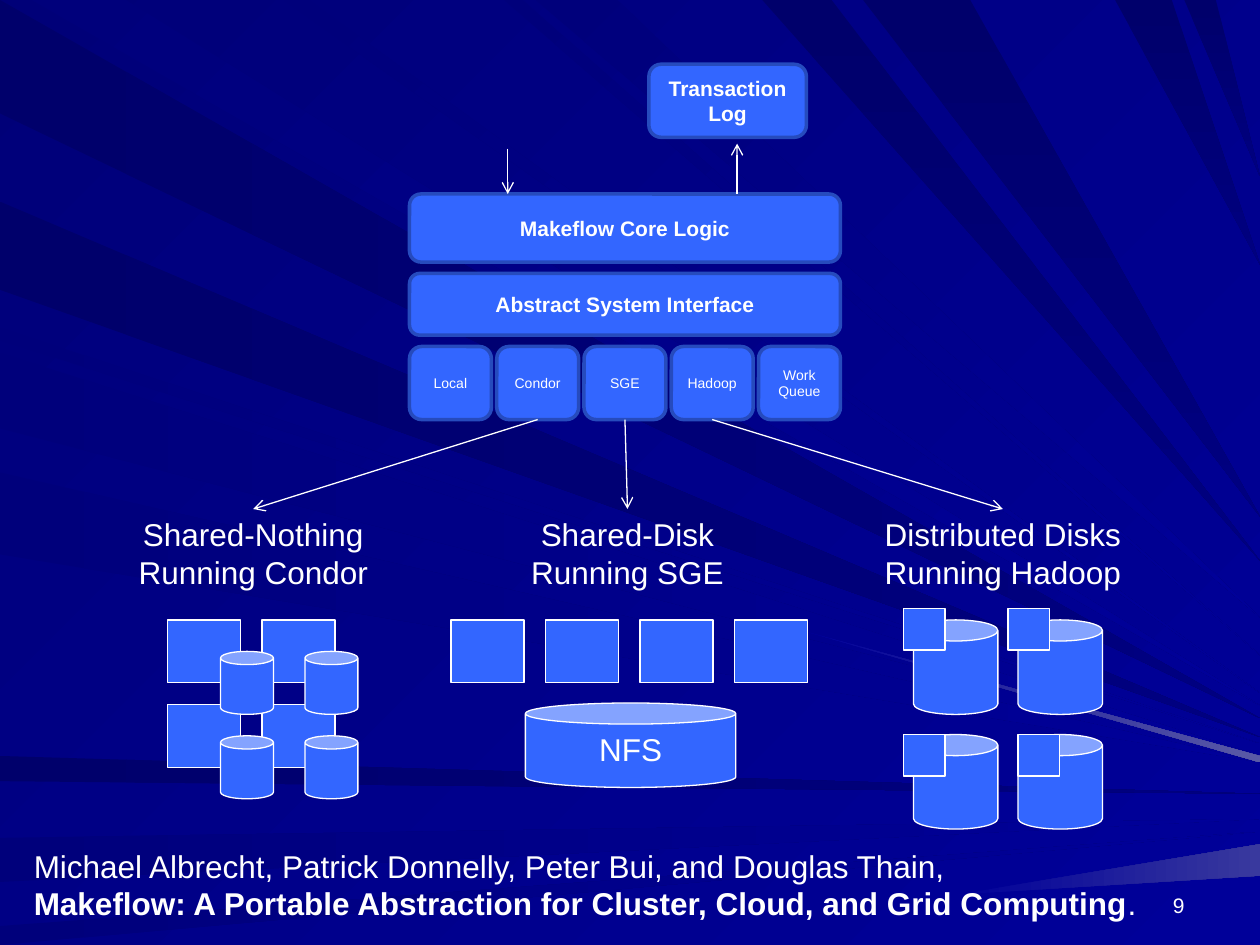
import lxml.etree
import pptx
import pptx.dml.color
import pptx.enum.shapes
import pptx.enum.text
import pptx.oxml.ns
import pptx.util

Inches = pptx.util.Inches
KIND = pptx.enum.shapes.MSO_SHAPE
ALIGN = pptx.enum.text.PP_ALIGN
ANCHOR = pptx.enum.text.MSO_ANCHOR
BLUE, EDGE, WHITE = "3366FF", "264BBD", "FFFFFF"
DEEP, PALE, GLOW = ("00006B", "000080"), ("00007B", "000099"), ("000099", "5A5AA6")

SIDE = [(0, 0.9, 5.7, DEEP), (1.6, 2.3, 5.85, DEEP), (2.6, 2.7, 5.9, PALE),
        (2.8, 3.4, 6, PALE), (3.75, 4.4, 6.05, PALE), (6, 6.2, 6.3, DEEP),
        (6.65, 7, 6.5, PALE), (7.35, 7.5, 6.6, PALE)]
TOP = [(0.25, 1, 5.6, PALE), (2.25, 2.45, 5.5, PALE), (4, 4.15, 5.2, PALE),
       (4.25, 4.9, 4.9, PALE), (6.05, 6.6, 4.45, DEEP), (6.85, 7.7, 4.1, DEEP),
       (8.85, 9.3, 2.1, DEEP), (9.4, 9.65, 1.4, DEEP)]


def paint(part, shade):
    """Give a fill or line fill one solid hex colour."""
    part.solid()
    part.fore_color.rgb = pptx.dml.color.RGBColor.from_string(shade)


def blend(fill, start, end, angle):
    """Give a fill a two-stop gradient with a clockwise angle."""
    fill.gradient()
    fill.gradient_angle = -angle % 360
    for stop, shade in zip(fill.gradient_stops, (start, end)):
        stop.color.rgb = pptx.dml.color.RGBColor.from_string(shade)


def write(frame, *lines, size=18, bold=False, align=ALIGN.CENTER, anchor=ANCHOR.TOP):
    """Write each line, a string or a list of (text, bold) runs, as a paragraph."""
    frame.vertical_anchor = anchor
    for i, line in enumerate(lines):
        par = frame.add_paragraph() if i else frame.paragraphs[0]
        par.alignment = align
        for words, heavy in [(line, bold)] if isinstance(line, str) else line:
            if words == "\v":
                par.add_line_break()
                continue
            run = par.add_run()
            run.text = words
            run.font.name, run.font.size, run.font.bold = "Arial", pptx.util.Pt(size), heavy
            run.font.color.rgb = pptx.dml.color.RGBColor.from_string(WHITE)


def block(slide, kind, left, top, width, height, edge=WHITE, weight=0.75):
    """Add a blue preset shape."""
    shape = slide.shapes.add_shape(kind, Inches(left), Inches(top), Inches(width), Inches(height))
    shape.shadow.inherit = False
    paint(shape.fill, BLUE)
    paint(shape.line.fill, edge)
    shape.line.width = pptx.util.Pt(weight)
    return shape


def panel(slide, left, top, width, height, *lines, size=12, bold=True):
    """Add a rounded, labelled box."""
    shape = block(slide, KIND.ROUNDED_RECTANGLE, left, top, width, height, EDGE, 2)
    shape.text_frame.word_wrap = True
    write(shape.text_frame, *lines, size=size, bold=bold, anchor=ANCHOR.MIDDLE)
    return shape


def note(slide, left, top, width, height, *lines, **form):
    """Add an unwrapped text box."""
    box = slide.shapes.add_textbox(Inches(left), Inches(top), Inches(width), Inches(height))
    box.text_frame.word_wrap = False
    write(box.text_frame, *lines, **form)
    return box


def arrow(slide, x1=0, y1=0, x2=0, y2=0):
    """Add a thin white line with an arrowhead at its end."""
    line = slide.shapes.add_connector(
        pptx.enum.shapes.MSO_CONNECTOR.STRAIGHT, Inches(x1), Inches(y1), Inches(x2), Inches(y2))
    paint(line.line.fill, WHITE)
    line.line.width = pptx.util.Pt(0.75)
    props = line.element.spPr
    tag = pptx.oxml.ns.qn
    lxml.etree.SubElement(props.find(tag("a:ln")), tag("a:tailEnd"), type="arrow")
    lxml.etree.SubElement(props, tag("a:effectLst"))
    return line


def grid(slide, kind, left, top, cols, rows, size, step):
    """Lay out equal shapes in columns and rows."""
    for row in range(rows):
        for col in range(cols):
            block(slide, kind, left + col * step[0], top + row * step[1], *size)


def ray(group, tone, angle, *points):
    """Add one gradient beam."""
    spots = [(Inches(x), Inches(y)) for x, y in points]
    pen = group.shapes.build_freeform(*spots[0], scale=1.0)
    pen.add_line_segments(spots[1:], close=True)
    beam = pen.convert_to_shape()
    beam.shadow.inherit = False
    beam.line.fill.background()
    blend(beam.fill, *tone, angle)


def backdrop(slide, right):
    """Draw the blue gradient and the rays that meet the right edge."""
    blend(slide.background.fill, "000078", "000099", 45)
    group = slide.shapes.add_group_shape()
    for start, end, tip, tone in SIDE:
        ray(group, tone, 0, (0, start), (right, tip), (0, end))
    for start, end, tip, tone in TOP:
        ray(group, tone, 90 if tone == DEEP else 45, (start, 0), (right, tip), (end, 0))
    ray(group, GLOW, 0, (6.35, 5), (right, 6), (right, 6.05))
    ray(group, (GLOW[0], "39399E"), 0, (7.6, 7.1), (right, 6.7), (right, 6.95))


def stack(slide, left, top, width):
    """Draw the layered engine and return its driver boxes."""
    panel(slide, left, top + 1.03, width, 0.54, "Makeflow Core Logic")
    panel(slide, left, top + 1.66, width, 0.49, "Abstract System Interface")
    names = [["Local"], ["Condor"], ["SGE"], ["Hadoop"], ["Work", "Queue"]]
    wide = 0.65
    step = (width - wide) / (len(names) - 1)
    drives = [panel(slide, left + i * step, top + 2.24, wide, 0.58, *name, size=8, bold=False)
              for i, name in enumerate(names)]
    arrow(slide, left + 0.78, top + 0.67, left + 0.78, top + 1.03)
    panel(slide, left + 1.9, top, 1.25, 0.58, "Transaction Log")
    arrow(slide, left + 2.6, top + 1.03, left + 2.6, top + 0.63)
    return drives


def target(slide, drive, left, top, width, *lines):
    """Add a cluster heading and the arrow that leads to it."""
    head = note(slide, left, top, width, 0.71, *lines)
    line = arrow(slide)
    line.begin_connect(drive, 2)
    line.end_connect(head, 0)


def nothing(slide, left, top):
    """Draw nodes that each have a disk of their own."""
    grid(slide, KIND.RECTANGLE, left, top, 2, 2, (0.58, 0.5), (0.75, 0.67))
    grid(slide, KIND.CAN, left + 0.42, top + 0.25, 2, 2, (0.42, 0.5), (0.67, 0.67))


def shared(slide, left, top):
    """Draw a row of nodes above one shared disk."""
    grid(slide, KIND.RECTANGLE, left, top, 4, 1, (0.58, 0.5), (0.75, 0))
    disk = block(slide, KIND.CAN, left + 0.59, top + 0.66, 1.67, 0.67)
    write(disk.text_frame, "NFS")


def spread(slide, left, top):
    """Draw large disks that each carry a small node."""
    grid(slide, KIND.CAN, left + 0.08, top + 0.09, 2, 2, (0.67, 0.75), (0.83, 0.91))
    for row, step in enumerate((0.83, 0.91)):
        grid(slide, KIND.RECTANGLE, left, top + row, 2, 1, (0.33, 0.33), (step, 0))


def main():
    """Build and save the slide."""
    deck = pptx.Presentation()
    deck.slide_width, deck.slide_height = Inches(10), Inches(7.5)
    slide = deck.slides.add_slide(deck.slide_layouts[6])
    backdrop(slide, 10)
    note(slide, 7.17, 6.83, 2.33, 0.5, "9", size=12, align=ALIGN.RIGHT, anchor=ANCHOR.BOTTOM)
    drives = stack(slide, 3.25, 0.51, 3.42)
    shared(slide, 3.58, 4.92)
    nothing(slide, 1.33, 4.92)
    spread(slide, 7.17, 4.83)
    target(slide, drives[1], 0.99, 4.04, 2.04, "Shared-Nothing", "Running Condor")
    target(slide, drives[2], 4.11, 4.04, 1.74, "Shared-Disk", "Running SGE")
    target(slide, drives[3], 6.91, 4.04, 2.1, "Distributed Disks", "Running Hadoop")
    note(slide, 0.17, 6.67, 9.04, 0.71, [
        ("Michael Albrecht, Patrick Donnelly, Peter Bui, and Douglas Thain,", False), ("\v", False),
        ("Makeflow: A Portable Abstraction for Cluster, Cloud, and Grid Computing", True),
        (".", False)], align=ALIGN.LEFT)
    deck.save("out.pptx")


if __name__ == "__main__":
    main()
